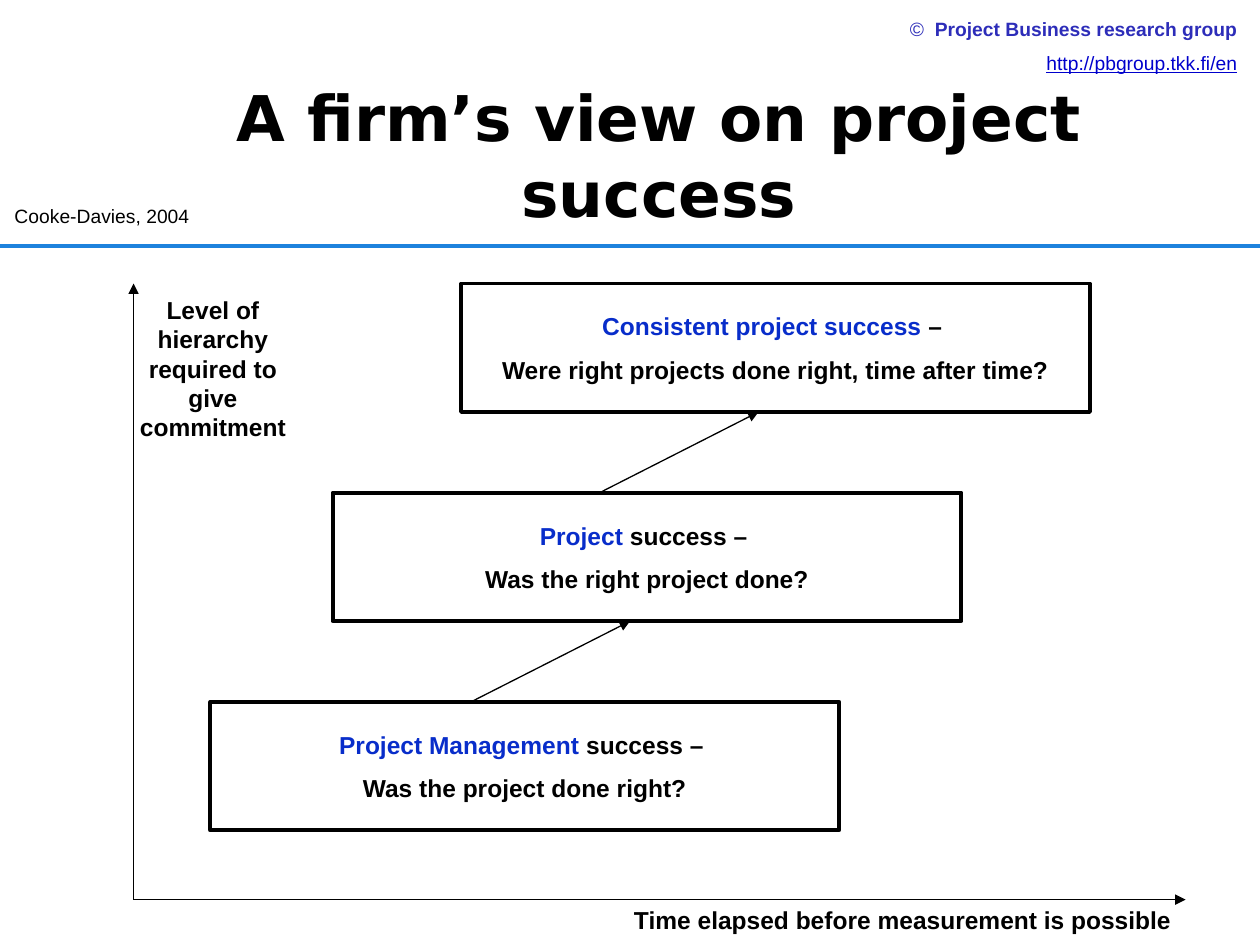
from pptx import Presentation, util as u
from pptx.dml.color import RGBColor
from pptx.enum import shapes, text
from pptx.oxml.ns import qn
from lxml import etree
from dataclasses import dataclass

W, H = 10, 7.5


@dataclass(frozen=True)
class Theme:
    black: str = "000000"
    rule: str = "1D82DD"
    accent: str = "082DCA"
    group: str = "2D2DB9"
    link: str = "0000CC"
    font: str = "Arial"
    title_font: str = "DejaVu Sans"
    title: int = 36
    body: int = 14
    small: int = 11
    thin: float = 0.75
    thick: float = 2.25


T = Theme()
ALIGN = text.PP_ALIGN
BODY = dict(name=T.font, size=u.Pt(T.body), bold=True, color=T.black)
SMALL = dict(name=T.font, size=u.Pt(T.small), bold=False, color=T.black)


def inches(*values):
    return [u.Inches(v) for v in values]


def style(font, fmt):
    for key, value in fmt.items():
        if key == "color":
            font.color.rgb = RGBColor.from_string(value)
        else:
            setattr(font, key, value)


def write(tf, paragraphs, fmt, align=ALIGN.CENTER):
    """Each paragraph is a list of (text, format changes) runs."""
    for i, runs in enumerate(paragraphs):
        p = tf.paragraphs[0] if i == 0 else tf.add_paragraph()
        p.alignment = align
        if i:
            p.space_before = u.Pt(fmt["size"].pt * 0.57)
        for content, changes in runs:
            r = p.add_run()
            r.text = content
            style(r.font, {**fmt, **changes})


def add_text(s, box, paragraphs, fmt, align=ALIGN.CENTER, wrap=True):
    tf = s.shapes.add_textbox(*inches(*box)).text_frame
    tf.word_wrap = wrap
    write(tf, paragraphs, fmt, align)


def add_line(s, start, end, color=T.black, width=T.thin, arrow=True):
    line = s.shapes.add_connector(shapes.MSO_CONNECTOR.STRAIGHT,
                                  *inches(*start, *end))
    line.line.color.rgb = RGBColor.from_string(color)
    line.line.width = u.Pt(width)
    if arrow:
        ln = line.line._get_or_add_ln()
        etree.SubElement(ln, qn("a:tailEnd"), type="triangle")
    etree.SubElement(line._element.spPr, qn("a:effectLst"))


def add_box(s, box, paragraphs):
    sp = s.shapes.add_shape(shapes.MSO_SHAPE.RECTANGLE, *inches(*box))
    sp.shadow.inherit = False
    sp.fill.background()
    sp.line.color.rgb = RGBColor.from_string(T.black)
    sp.line.width = u.Pt(T.thick)
    tf = sp.text_frame
    tf.word_wrap = False
    tf.vertical_anchor = text.MSO_ANCHOR.MIDDLE
    write(tf, paragraphs, BODY)


def add_title(s, box, content):
    sp = s.shapes.title
    sp.left, sp.top, sp.width, sp.height = inches(*box)
    tf = sp.text_frame
    tf.auto_size = text.MSO_AUTO_SIZE.NONE
    tf.word_wrap = True
    tf.vertical_anchor = text.MSO_ANCHOR.MIDDLE
    write(tf, [[(content, {})]],
          dict(BODY, name=T.title_font, size=u.Pt(T.title)))


def add_header(s):
    add_line(s, (0, 0.26 * H), (W, 0.26 * H), T.rule, T.thick, arrow=False)
    add_text(s, (6.8, 0.09, 3.12, 0.56), [
        [("©  ", {}), ("Project Business research group", {"bold": True})],
        [("http://pbgroup.tkk.fi/en", {"color": T.link, "underline": True})],
    ], dict(SMALL, color=T.group), ALIGN.RIGHT)
    add_title(s, (0.66, 0.67, 9.14, 1.11), "A firm’s view on project success")
    add_text(s, (0.01, 1.57, 1.6, 0.29), [[("Cooke-Davies, 2004", {})]],
             SMALL, wrap=False)


def add_axes(s):
    origin = (1.06, 7.14)
    add_line(s, origin, (1.06, 2.25))
    add_line(s, origin, (9.41, 7.14))
    add_text(s, (4.45, 7.13, 5.43, 0.34),
             [[("Time elapsed before measurement is possible", {})]], BODY)
    add_text(s, (0.94, 2.29, 1.5, 1.28),
             [[("Level of hierarchy required to give commitment", {})]], BODY)


def add_steps(s):
    """Staircase of boxes, lowest first, each joined to the one above."""
    width, height, bottom_row, rise = 4.99, 1.02, 5.57, 1.66
    steps = [
        (1.67, "Project Management ", "success – ",
         "Was the project done right?"),
        (2.64, "Project ", "success – ", "Was the right project done?"),
        (3.66, "Consistent project success ", "– ",
         "Were right projects done right, time after time?"),
    ]
    for i, (left, key, rest, question) in enumerate(steps):
        top = bottom_row - i * rise
        if i:  # arrow from the box below
            tip = left + 2.36
            add_line(s, (tip - 1.26, top + rise), (tip, top + height))
        add_box(s, (left, top, width, height),
                [[(key, {"color": T.accent}), (rest, {})], [(question, {})]])


def main():
    prs = Presentation()
    prs.slide_width, prs.slide_height = inches(W, H)
    s = prs.slides.add_slide(prs.slide_layouts[5])
    add_header(s)
    add_axes(s)
    add_steps(s)
    prs.save("out.pptx")


if __name__ == "__main__":
    main()
